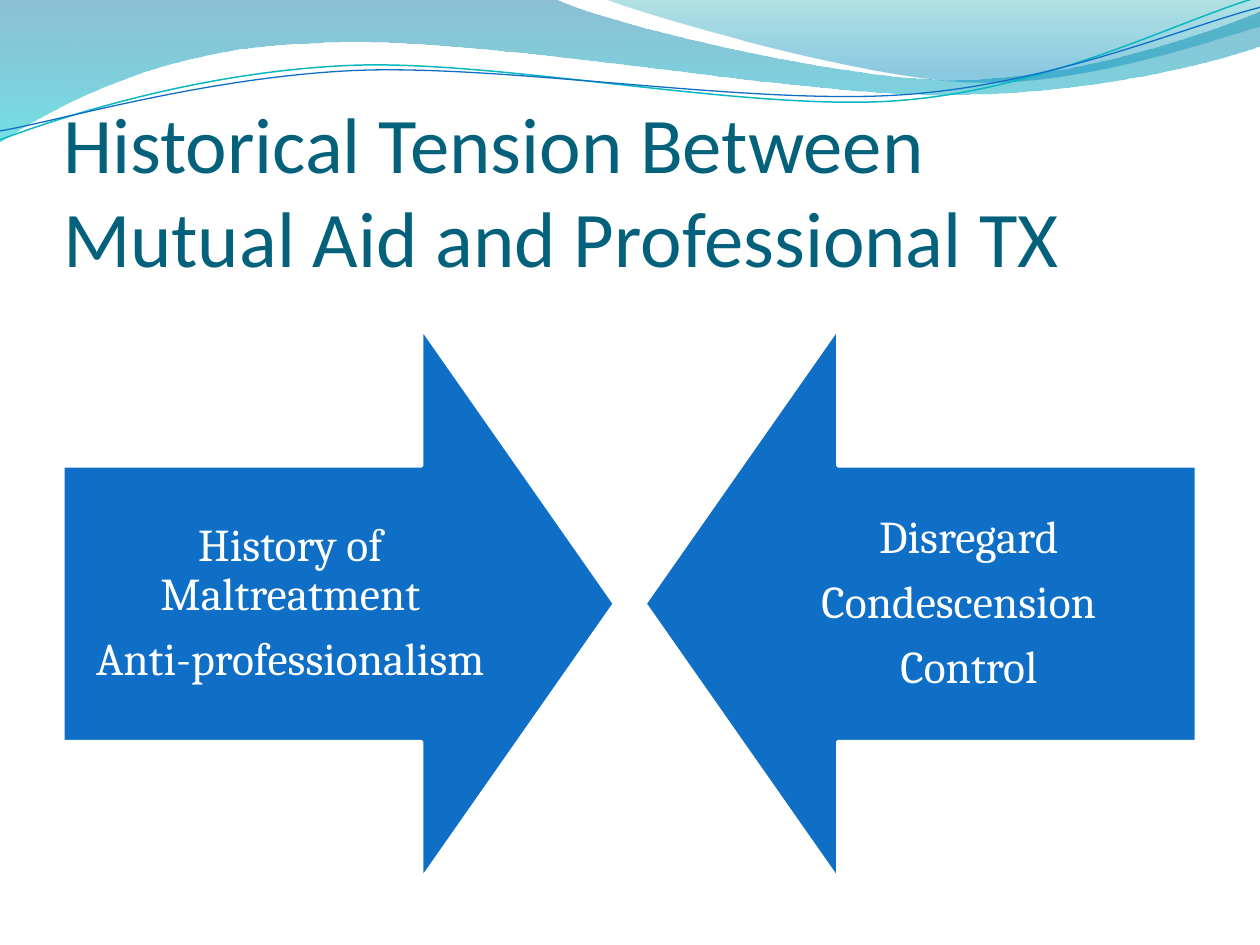
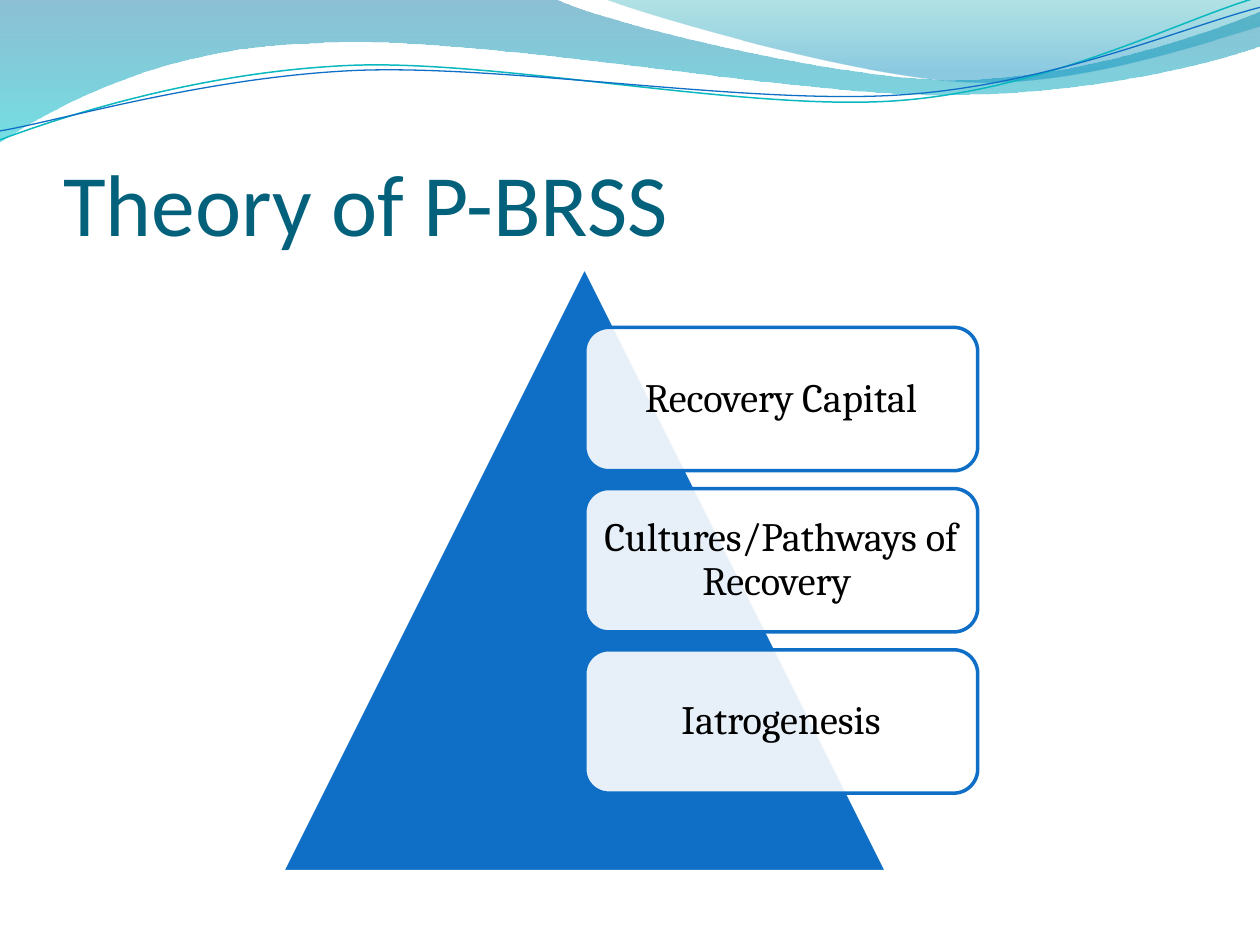
from itertools import chain, islice

from lxml.etree import SubElement
from pptx import Presentation
from pptx.dml.color import RGBColor
from pptx.enum.shapes import MSO_SHAPE
from pptx.enum.text import MSO_ANCHOR, MSO_AUTO_SIZE, PP_ALIGN
from pptx.oxml.ns import qn
from pptx.util import Cm, Pt

COLORS = {
    "blue": "0F6FC6", "title": "04617B", "white": "FFFFFF", "black": "000000",
    "teal_line": "0AB8BF", "band_top": "0074A1", "band_bottom": "00C6CF",
    "crest_top": "00A1A9", "crest_bottom": "008BBF",
}
RGB = {name: RGBColor.from_string(value) for name, value in COLORS.items()}
TITLE_FONT, BODY_FONT = "Calibri", "Cambria"


def set_alpha(sp, percents):
    for color, percent in zip(sp._element.spPr.iter(qn("a:srgbClr")), percents):
        SubElement(color, qn("a:alpha")).set("val", str(percent * 1000))


def write_lines(sp, lines, size, color, inset):
    tf = sp.text_frame
    tf.word_wrap = True
    tf.vertical_anchor = MSO_ANCHOR.MIDDLE
    tf.margin_left = tf.margin_right = tf.margin_top = tf.margin_bottom = Cm(inset)
    tf.text = "\n".join(lines)
    for p in tf.paragraphs:
        p.alignment = PP_ALIGN.CENTER
        p.line_spacing = 0.9
        p.space_after = Pt(9)
        p.font.name = BODY_FONT
        p.font.size = Pt(size)
        p.font.color.rgb = RGB[color]


prs = Presentation()
prs.slide_width, prs.slide_height = Cm(25.4), Cm(19.05)

titles = [
    ("Historical Tension Between Mutual Aid and Professional TX", 45, (1.27, 0.89, 20.12, 4.83)),
    ("Theory of P-BRSS", 50, (1.27, 1.96, 22.86, 3.17)),
]
for text, size, box in titles:
    s = prs.slides.add_slide(prs.slide_layouts[5])
    sp = s.shapes.title
    sp.left, sp.top, sp.width, sp.height = map(Cm, box)
    tf = sp.text_frame
    tf.text = text
    tf.word_wrap = True
    tf.auto_size = MSO_AUTO_SIZE.NONE
    tf.vertical_anchor = MSO_ANCHOR.BOTTOM
    tf.margin_left = tf.margin_right = tf.margin_bottom = 0
    tf.margin_top = Cm(0.13)
    p = tf.paragraphs[0]
    p.alignment = PP_ALIGN.LEFT
    p.font.name = TITLE_FONT
    p.font.size = Pt(size)
    p.font.color.rgb = RGB["title"]
tension, theory = prs.slides

waves = [
    {"start": (0, 0), "segments": [
        [(11.18, -0.03)],
        [(12.09, 0.43), (16.87, 1.6), (19.25, 1.6)],
        [(21.67, 1.6), (24.33, 0.66), (25.4, 0.23)],
        [(25.43, 0.91)],
        [(24.97, 1.12), (22.1, 1.93), (18.95, 1.91)],
        [(15.8, 1.91), (9.7, 0.71), (6.53, 0.86)],
        [(3.28, 0.91), (1.17, 2.11), (-0.03, 2.87)],
        [(0, 0)]],
     "stops": [(0, "band_top", 45), (1, "band_bottom", 55)]},
    {"start": (12.17, -0.03), "segments": [
        [(12.93, 0.28), (17.32, 1.57), (19.53, 1.65)],
        [(21.74, 1.75), (24.41, 0.81), (25.4, 0.53)],
        [(25.4, 0)],
        [(12.17, -0.03)]],
     "stops": [(0, "crest_top", 30), (0.8, "crest_bottom", 45)]},
    {"start": (0, 2.82), "segments": [
        [(1.22, 2.36), (4.01, 1.45), (7.04, 1.32)],
        [(10.03, 1.19), (15.06, 2.26), (18.11, 2.03)],
        [(21.16, 1.8), (23.83, 0.38), (25.35, -0.05)]],
     "line": ("teal_line", 0.85)},
    {"start": (0, 2.64), "segments": [
        [(1.19, 2.44), (4.17, 1.55), (7.19, 1.42)],
        [(10.24, 1.3), (15.16, 2.13), (18.21, 1.91)],
        [(21.23, 1.7), (23.9, 0.53), (25.4, 0.15)]],
     "line": ("blue", 0.75)},
]
master_tree = prs.slide_master.shapes._spTree
for i, wave in enumerate(waves):
    start_x, start_y = wave["start"]
    builder = tension.shapes.build_freeform(Cm(start_x), Cm(start_y))
    builder.add_line_segments(
        [(Cm(x), Cm(y)) for x, y in chain.from_iterable(wave["segments"])],
        close="stops" in wave)
    sp = builder.convert_to_shape()
    steps = iter(list(sp._element.iter(qn("a:lnTo"))))
    for segment in wave["segments"]:
        first, *others = islice(steps, len(segment))
        if others:
            first.tag = qn("a:cubicBezTo")
        for step in others:
            first.append(step[0])
            step.getparent().remove(step)
    sp.shadow.inherit = False
    if "stops" in wave:
        sp.fill.gradient()
        sp.fill.gradient_angle = 270
        for stop, (position, color, _) in zip(sp.fill.gradient_stops, wave["stops"]):
            stop.position = position
            stop.color.rgb = RGB[color]
        set_alpha(sp, [alpha for _, _, alpha in wave["stops"]])
        sp.line.fill.background()
    else:
        color, width = wave["line"]
        sp.fill.background()
        sp.line.color.rgb = RGB[color]
        sp.line.width = Pt(width)
    sp._element.nvSpPr.cNvPr.set("id", str(100 + i))
    master_tree.insert(2 + i, sp._element)

arrows = [
    (MSO_SHAPE.RIGHT_ARROW, 1.27, ["History of Maltreatment", "Anti-professionalism"]),
    (MSO_SHAPE.LEFT_ARROW, 13, ["Disregard", "Condescension  ", "Control"]),
]
solids = []
for kind, left, lines in arrows:
    sp = tension.shapes.add_shape(kind, Cm(left), Cm(6.61), Cm(11.12), Cm(11.12))
    sp.adjustments[0], sp.adjustments[1] = 0.5, 0.35
    write_lines(sp, lines, 26, "white", 0.5)
    solids.append(sp)

solids.append(theory.shapes.add_shape(
    MSO_SHAPE.ISOSCELES_TRIANGLE, Cm(5.69), Cm(5.38), Cm(12.19), Cm(12.19)))
for sp in solids:
    sp.shadow.inherit = False
    sp.fill.solid()
    sp.fill.fore_color.rgb = RGB["blue"]
    sp.line.color.rgb = RGB["white"]
    sp.line.width = Pt(2)

for i, label in enumerate(["Recovery Capital", "Cultures/Pathways of Recovery ", "Iatrogenesis"]):
    sp = theory.shapes.add_shape(
        MSO_SHAPE.ROUNDED_RECTANGLE, Cm(11.79), Cm(6.6 + 3.25 * i), Cm(7.92), Cm(2.89))
    sp.shadow.inherit = False
    sp.fill.solid()
    sp.fill.fore_color.rgb = RGB["white"]
    set_alpha(sp, [90])
    sp.line.color.rgb = RGB["blue"]
    sp.line.width = Pt(2)
    write_lines(sp, [label], 23, "black", 0.2)

prs.save("out.pptx")
